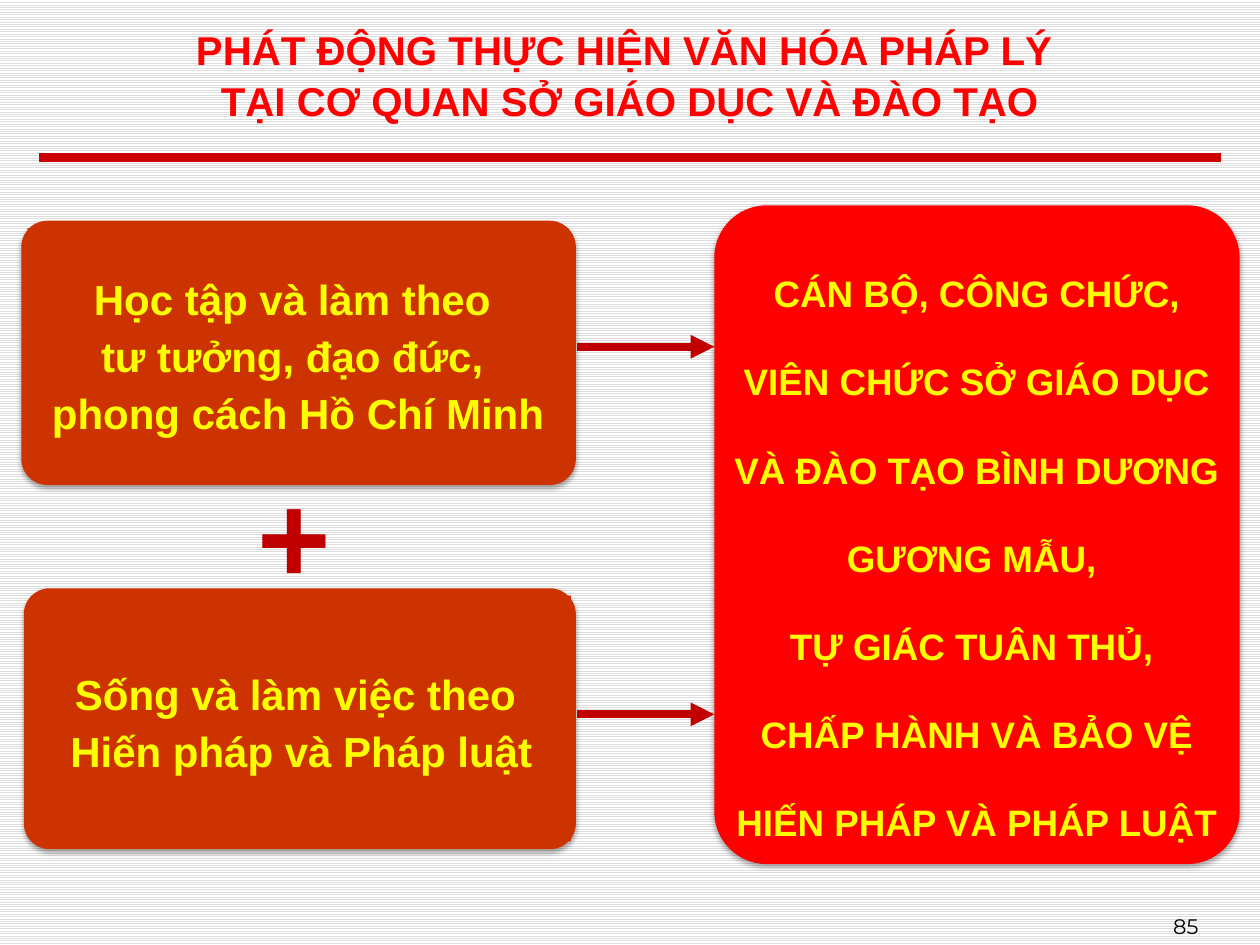
from lxml.etree import SubElement
from pptx import Presentation
from pptx.dml.color import RGBColor
from pptx.enum.dml import MSO_PATTERN
from pptx.enum.shapes import MSO_CONNECTOR, MSO_SHAPE
from pptx.enum.text import MSO_ANCHOR, PP_ALIGN
from pptx.oxml import parse_xml
from pptx.oxml.ns import qn
from pptx.util import Cm, Pt

SHADOW = """<a:effectLst xmlns:a="http://schemas.openxmlformats.org/drawingml/2006/main">
<a:outerShdw blurRad="39370" dist="22860" dir="5400000" rotWithShape="0">
<a:srgbClr val="000000"><a:alpha val="35000"/></a:srgbClr></a:outerShdw></a:effectLst>"""

color = RGBColor.from_string


def write(box, text, size, hue, spacing=1.0, gap=0, inset=(0.25, 0.13),
          font="Arial", bold=True, align=PP_ALIGN.CENTER, anchor=MSO_ANCHOR.MIDDLE):
    frame = box.text_frame
    frame.word_wrap = True
    frame.vertical_anchor = anchor
    frame.margin_left = frame.margin_right = Cm(inset[0])
    frame.margin_top = frame.margin_bottom = Cm(inset[1])
    para = frame.paragraphs[0]
    para.text = text
    para.alignment = align
    para.line_spacing = spacing
    para.space_before = para.space_after = Pt(gap)
    for span in para.runs:
        span.font.name = font
        span.font.size = Pt(size)
        span.font.bold = bold
        span.font.color.rgb = color(hue)


def draw_line(start, end, y, hue, width):
    line = page.shapes.add_connector(MSO_CONNECTOR.STRAIGHT, Cm(start), Cm(y), Cm(end), Cm(y))
    line.line.color.rgb = color(hue)
    line.line.width = Pt(width)
    SubElement(line._element.spPr, qn("a:effectLst"))
    return line


deck = Presentation()
deck.slide_width, deck.slide_height = Cm(25.4), Cm(19.05)
page = deck.slides.add_slide(deck.slide_layouts[6])
backdrop = page.background.fill
backdrop.patterned()
backdrop.pattern = MSO_PATTERN.LIGHT_HORIZONTAL
backdrop.fore_color.rgb = color("DDDDDD")
backdrop.back_color.rgb = color("FFFFFF")

draw_line(0.79, 24.61, 3.18, "CC0000", 5)

number = page.shapes.add_textbox(Cm(18.95), Cm(18.21), Cm(5.46), Cm(0.84))
write(number, "85", 12, "000000", font="Montserrat", bold=False,
      align=PP_ALIGN.RIGHT, anchor=MSO_ANCHOR.BOTTOM)

title = page.shapes.add_textbox(Cm(0.66), Cm(0.43), Cm(24.1), Cm(2.11))
write(title, "PHÁT ĐỘNG THỰC HIỆN VĂN HÓA PHÁP LÝ \nTẠI CƠ QUAN SỞ GIÁO DỤC VÀ ĐÀO TẠO",
      23, "FF0000", spacing=1.05)

cards = [
    ((14.4, 4.14, 10.59, 13.28), (14.71, 4.47, 9.96, 12.65), "FF0000", 21, 2.0, (0.05, 0.25),
     "CÁN BỘ, CÔNG CHỨC, VIÊN CHỨC SỞ GIÁO DỤC VÀ ĐÀO TẠO BÌNH DƯƠNG GƯƠNG MẪU, \n"
     "TỰ GIÁC TUÂN THỦ, \nCHẤP HÀNH VÀ BẢO VỆ HIẾN PHÁP VÀ PHÁP LUẬT "),
    ((0.43, 4.45, 11.18, 5.33), (0.56, 4.6, 10.9, 5.0), "CC3300", 24, 1.14, (0.05, 0.05),
     "Học tập và làm theo \ntư tưởng, đạo đức, \nphong cách Hồ Chí Minh"),
    ((0.48, 11.86, 11.13, 5.26), (0.64, 12.01, 10.87, 4.95), "CC3300", 24, 1.14, (0.05, 0.05),
     "Sống và làm việc theo \nHiến pháp và Pháp luật"),
]
for outer, inner, hue, size, spacing, inset, text in cards:
    group = page.shapes.add_group_shape()
    card = group.shapes.add_shape(MSO_SHAPE.ROUNDED_RECTANGLE, *map(Cm, outer))
    card.adjustments[0] = 0.1
    label = group.shapes.add_shape(MSO_SHAPE.RECTANGLE, *map(Cm, inner))
    for box in (card, label):
        box.fill.solid()
        box.fill.fore_color.rgb = color(hue)
        box.line.fill.background()
    card._element.spPr.append(parse_xml(SHADOW))
    label.shadow.inherit = False
    write(label, text, size, "FFFF00", spacing, 6, inset)

for y in (6.99, 14.4):
    arrow = draw_line(11.63, 14.4, y, "C00000", 4.5)
    SubElement(arrow.line._get_or_add_ln(), qn("a:tailEnd"), type="triangle")

plus = page.shapes.add_textbox(Cm(4.24), Cm(9.09), Cm(3.38), Cm(3.33))
write(plus, "+", 72, "C00000")
plus.text_frame.paragraphs[0].space_before = Pt(14)

deck.save("out.pptx")
